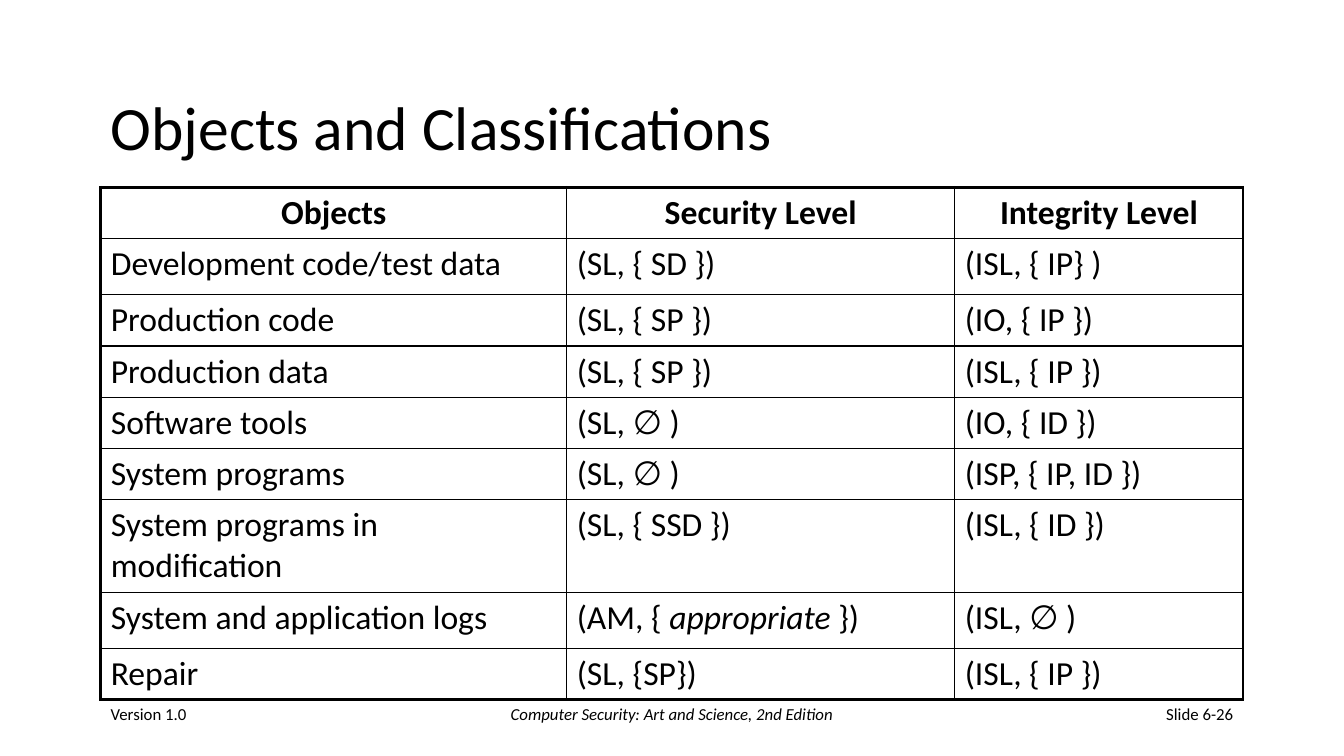
from dataclasses import dataclass

from lxml import etree
from pptx import Presentation
from pptx import util as u
from pptx.dml.color import RGBColor
from pptx.enum import text
from pptx.oxml.ns import qn

SLIDE_W, SLIDE_H = u.Inches(13.33), u.Inches(7.5)
GRID_COLS, GRID_ROWS = 120, 90
Align = text.PP_ALIGN


@dataclass(frozen=True)
class Theme:
    font: str = "Calibri"
    ink: str = "000000"
    title: int = 44
    table: int = 24
    footer: int = 12
    thin: float = 1
    thick: float = 2.25


@dataclass(frozen=True)
class Box:
    col: float
    row: float
    cols: float
    rows: float

    def emu(self) -> tuple[int, int, int, int]:
        return across(self.col), down(self.row), across(self.cols), down(self.rows)


@dataclass(frozen=True)
class Footer:
    words: str
    box: Box
    align: Align
    italic: bool = False


@dataclass(frozen=True)
class Row:
    cells: tuple[str, str, str]
    height: float = 6.1


THEME = Theme()
TITLE_BOX = Box(9, 8, 102, 15)
TABLE_COLS = (41.6, 34.65, 25.75)
TABLE_LEFT, TABLE_TOP = 9, 22.3
ROWS = (
    Row(("Objects", "Security Level", "Integrity Level")),
    Row(("Development code/test data", "(SL, { SD })", "(ISL, { IP} )"), 6.7),
    Row(("Production code", "(SL, { SP })", "(IO, { IP })")),
    Row(("Production data", "(SL, { SP })", "(ISL, { IP })")),
    Row(("Software tools", "(SL, ∅ )", "(IO, { ID })")),
    Row(("System programs", "(SL, ∅ )", "(ISP, { IP, ID })")),
    Row(("System programs in modification", "(SL, { SSD })", "(ISL, { ID })"), 11),
    Row(("System and application logs", "(AM, { *appropriate* })", "(ISL, ∅ )"), 6.7),
    Row(("Repair", "(SL, {SP})", "(ISL, { IP })")),
)
FOOTERS = (
    Footer("Version 1.0", Box(9, 82, 25, 6), Align.LEFT),
    Footer("Computer Security: Art and Science, 2nd Edition", Box(41, 82, 38, 6),
           Align.CENTER, True),
    Footer("Slide 6-26", Box(86, 82, 25, 6), Align.RIGHT),
)


def across(cols: float) -> int:
    return round(SLIDE_W * cols / GRID_COLS)


def down(rows: float) -> int:
    return round(SLIDE_H * rows / GRID_ROWS)


def write(tf, words: str, size: int, align: Align, bold: bool = False,
          italic: bool = False) -> None:
    p = tf.paragraphs[0]
    p.alignment = align
    f = p.font
    f.name, f.size, f.bold, f.italic = THEME.font, u.Pt(size), bold, italic
    f.color.rgb = RGBColor.from_string(THEME.ink)
    for i, part in enumerate(words.split("*")):
        r = p.add_run()
        r.text = part
        if i % 2:
            r.font.italic = True


def add_border(cell, side: str, width: float) -> None:
    tc_pr = cell._tc.get_or_add_tcPr()
    ln = etree.SubElement(tc_pr, qn(f"a:ln{side}"), w=str(u.Pt(width)))
    fill = etree.SubElement(ln, qn("a:solidFill"))
    etree.SubElement(fill, qn("a:srgbClr"), val=THEME.ink)


def draw_title(s) -> None:
    sp = s.shapes.title
    sp.left, sp.top, sp.width, sp.height = TITLE_BOX.emu()
    tf = sp.text_frame
    tf.auto_size = text.MSO_AUTO_SIZE.NONE
    tf.vertical_anchor = text.MSO_ANCHOR.MIDDLE
    write(tf, "Objects and Classifications", THEME.title, Align.LEFT)
    tf.paragraphs[0].line_spacing = 0.9


def draw_table(s) -> None:
    box = Box(TABLE_LEFT, TABLE_TOP, sum(TABLE_COLS), sum(row.height for row in ROWS))
    table = s.shapes.add_table(len(ROWS), len(TABLE_COLS), *box.emu()).table
    table.first_row = table.horz_banding = False
    for column, width in zip(table.columns, TABLE_COLS):
        column.width = across(width)
    last_row, last_col = len(ROWS) - 1, len(TABLE_COLS) - 1
    for i, row in enumerate(ROWS):
        table.rows[i].height = down(row.height)
        for j, words in enumerate(row.cells):
            cell = table.cell(i, j)
            edges = {"L": j == 0, "R": j == last_col, "T": i == 0, "B": i == last_row}
            for side, outer in edges.items():
                add_border(cell, side, THEME.thick if outer else THEME.thin)
            cell.fill.background()
            header = i == 0
            write(cell.text_frame, words, THEME.table,
                  Align.CENTER if header else Align.LEFT, bold=header)


def draw_footer(s, footer: Footer) -> None:
    tf = s.shapes.add_textbox(*footer.box.emu()).text_frame
    tf.word_wrap = True
    tf.vertical_anchor = text.MSO_ANCHOR.MIDDLE
    write(tf, footer.words, THEME.footer, footer.align, italic=footer.italic)


def main() -> None:
    prs = Presentation()
    prs.slide_width, prs.slide_height = SLIDE_W, SLIDE_H
    s = prs.slides.add_slide(prs.slide_layouts[5])
    draw_title(s)
    draw_table(s)
    for footer in FOOTERS:
        draw_footer(s, footer)
    prs.save("out.pptx")


if __name__ == "__main__":
    main()
